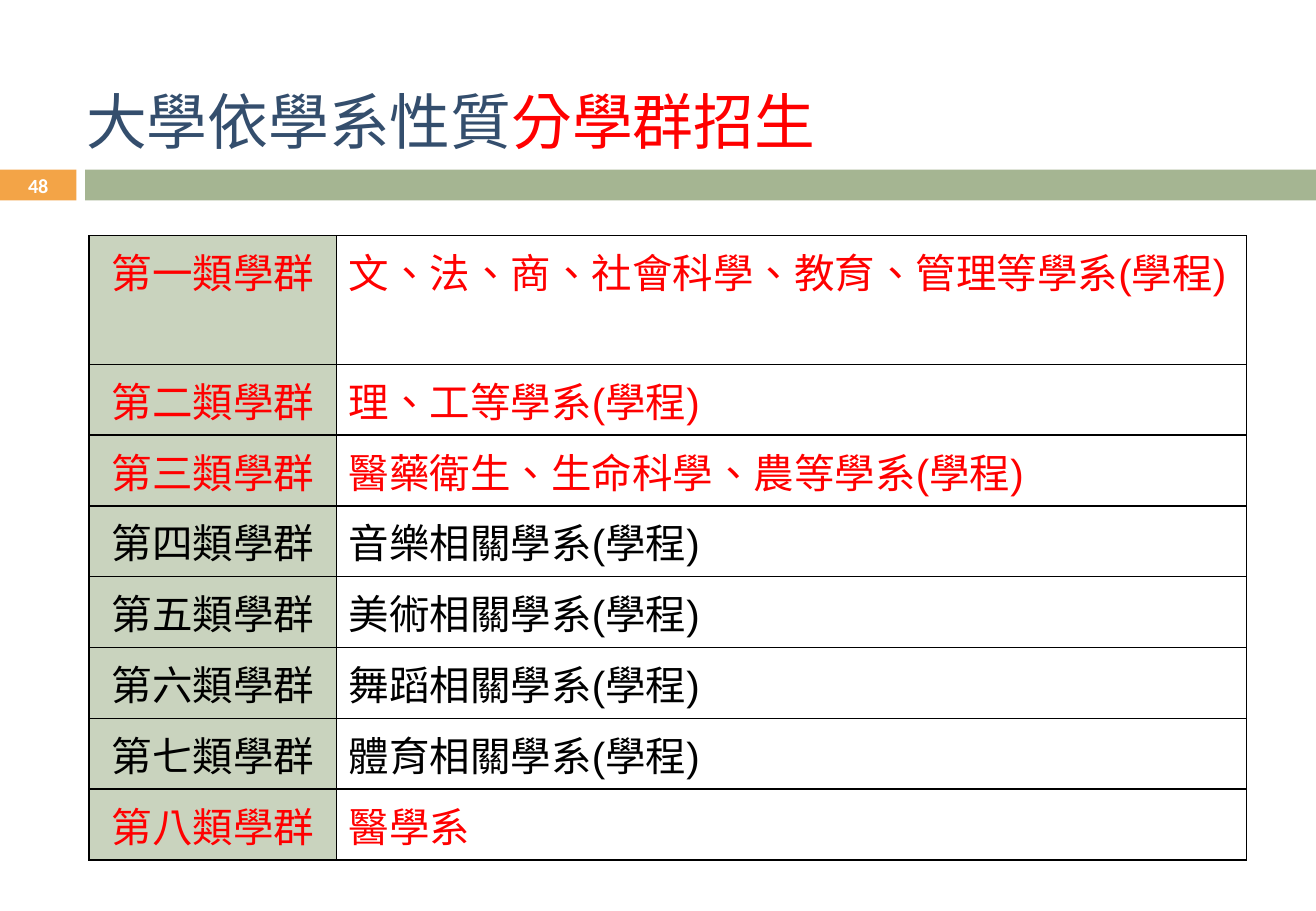
"""Build the slide on university department groups."""
from lxml import etree
from pptx import Presentation, util as u
from pptx.dml.color import RGBColor
from pptx.enum import lang, shapes, text
from pptx.oxml.ns import qn

TITLE = [("大學依學系性質", "navy"), ("分學群招生", "red")]
PAGE = "48"
GROUPS = [
    ("一", "文、法、商、社會科學、教育、管理等學系(學程)", "red"),
    ("二", "理、工等學系(學程)", "red"),
    ("三", "醫藥衛生、生命科學、農等學系(學程)", "red"),
    ("四", "音樂相關學系(學程)", "black"),
    ("五", "美術相關學系(學程)", "black"),
    ("六", "舞蹈相關學系(學程)", "black"),
    ("七", "體育相關學系(學程)", "black"),
    ("八", "醫學系", "red"),
]
THEME = {
    "color": {"navy": "344E6D", "red": "FF0000", "black": "000000",
              "white": "FFFFFF", "orange": "F3A447", "green": "A5B592",
              "pale": "C9D3BE"},
    "title": {"name": "Calibri", "size": u.Pt(36)},
    "page": {"name": "Calibri", "size": u.Pt(11.9), "bold": True},
    "cell": {"name": "Arial", "size": u.Pt(24)},
}
WIDE, HIGH = 27.51, 19.05
TAB, GAP, BAR = 1.6, 0.18, (3.55, 0.64)
COLS = (5.18, 19.02)
TALL, ROW = 2.69, 1.48
HANG = u.Cm(0.97)
EDGE = u.Pt(1)


def color(name):
    return RGBColor.from_string(THEME["color"][name])


def write(para, words, style, tint):
    run = para.add_run()
    run.text = words
    for key, val in THEME[style].items():
        setattr(run.font, key, val)
    run.font.language_id = lang.MSO_LANGUAGE_ID.TRADITIONAL_CHINESE
    run.font.color.rgb = color(tint)


def band(slide, left, width, tint):
    bar = slide.shapes.add_shape(
        shapes.MSO_SHAPE.RECTANGLE, u.Cm(left), u.Cm(BAR[0]),
        u.Cm(width), u.Cm(BAR[1]))
    bar.shadow.inherit = False
    bar.fill.solid()
    bar.fill.fore_color.rgb = color(tint)
    bar.line.fill.background()
    return bar.text_frame


def border(cell):
    props = cell._tc.get_or_add_tcPr()
    for side in ("lnL", "lnR", "lnT", "lnB"):
        line = etree.SubElement(props, qn("a:" + side), w=str(EDGE))
        fill = etree.SubElement(line, qn("a:solidFill"))
        etree.SubElement(fill, qn("a:srgbClr"), val=THEME["color"]["black"])


def fill_cell(cell, words, tint, head):
    border(cell)
    if head:
        cell.fill.solid()
        cell.fill.fore_color.rgb = color("pale")
    else:
        cell.fill.background()
    para = cell.text_frame.paragraphs[0]
    para.alignment = text.PP_ALIGN.CENTER if head else text.PP_ALIGN.LEFT
    props = para._p.get_or_add_pPr()
    props.set("marL", str(HANG))
    props.set("indent", str(-HANG))
    write(para, words, "cell", tint)


def main():
    deck = Presentation()
    deck.slide_width, deck.slide_height = u.Cm(WIDE), u.Cm(HIGH)
    slide = deck.slides.add_slide(deck.slide_layouts[6])

    page = band(slide, 0, TAB, "orange")
    band(slide, TAB + GAP, WIDE - TAB - GAP, "green")
    page.margin_top = page.margin_bottom = 0
    page.vertical_anchor = text.MSO_ANCHOR.MIDDLE
    page.paragraphs[0].alignment = text.PP_ALIGN.CENTER
    write(page.paragraphs[0], PAGE, "page", "white")

    title = slide.shapes.add_textbox(
        u.Cm(1.55), u.Cm(1.4), u.Cm(24.8), u.Cm(2)).text_frame
    title.word_wrap = True
    title.vertical_anchor = text.MSO_ANCHOR.BOTTOM
    for words, tint in TITLE:
        write(title.paragraphs[0], words, "title", tint)

    rows = [TALL] + [ROW] * (len(GROUPS) - 1)
    table = slide.shapes.add_table(
        len(rows), len(COLS), u.Cm(1.86), u.Cm(4.93),
        u.Cm(sum(COLS)), u.Cm(sum(rows))).table
    for col, width in zip(table.columns, COLS):
        col.width = u.Cm(width)
    for row, high, (num, depts, tint) in zip(table.rows, rows, GROUPS):
        row.height = u.Cm(high)
        fill_cell(row.cells[0], f"第{num}類學群", tint, True)
        fill_cell(row.cells[1], depts, tint, False)

    deck.save("out.pptx")


if __name__ == "__main__":
    main()
